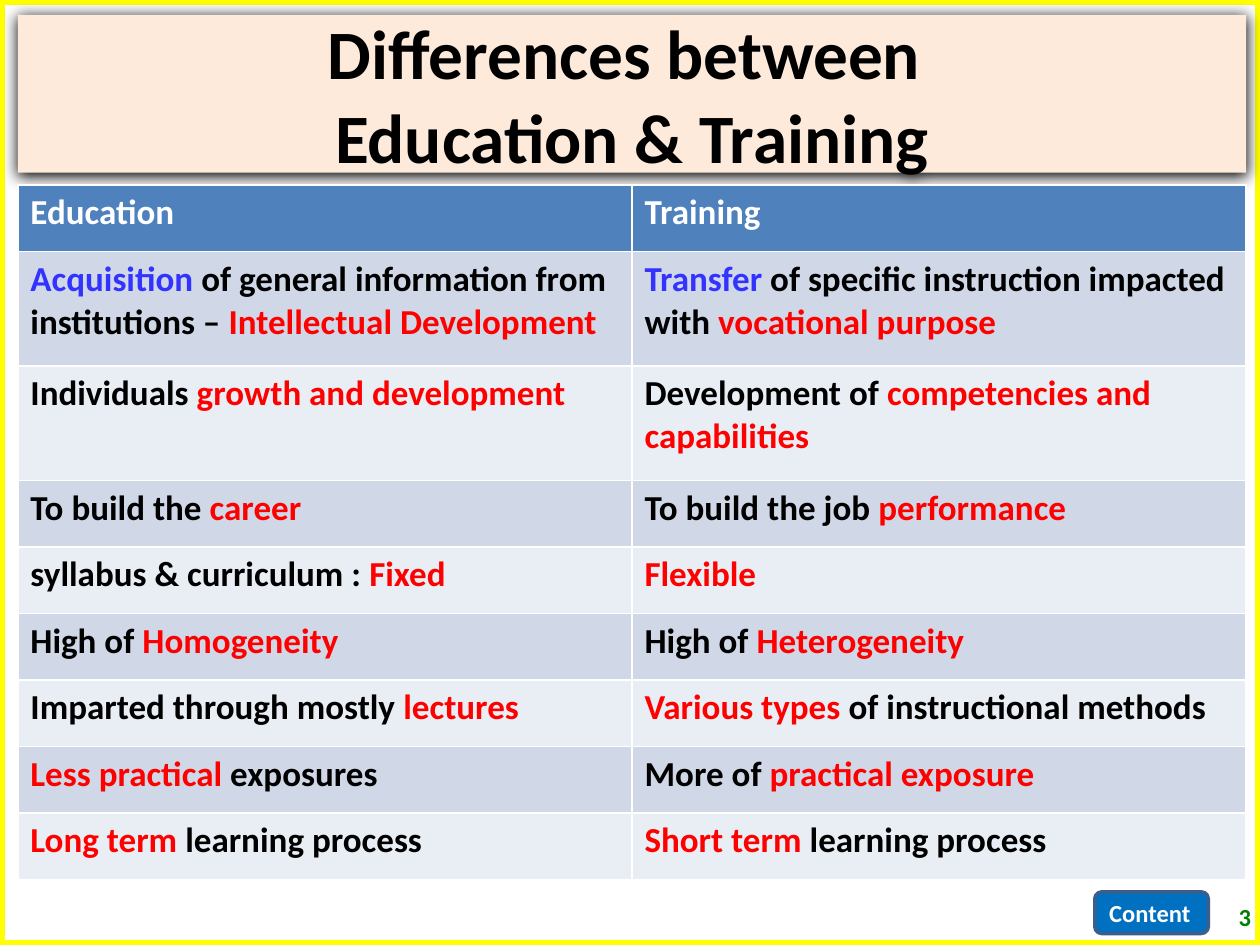
from dataclasses import dataclass
from typing import Optional

from lxml import etree
from pptx import Presentation
from pptx.dml.color import RGBColor
from pptx.enum.shapes import MSO_SHAPE
from pptx.enum.text import MSO_ANCHOR, PP_ALIGN
from pptx.oxml.ns import qn
from pptx.util import Cm, Pt

RECTANGLE, ROUNDED = MSO_SHAPE.RECTANGLE, MSO_SHAPE.ROUNDED_RECTANGLE
LEFT, CENTER, RIGHT = PP_ALIGN.LEFT, PP_ALIGN.CENTER, PP_ALIGN.RIGHT
MIDDLE = MSO_ANCHOR.MIDDLE

BLACK = RGBColor(0x00, 0x00, 0x00)
WHITE = RGBColor(0xFF, 0xFF, 0xFF)
RED = RGBColor(0xFF, 0x00, 0x00)
BLUE = RGBColor(0x33, 0x33, 0xFF)
GREEN = RGBColor(0x00, 0x80, 0x00)
YELLOW = RGBColor(0xFF, 0xFF, 0x00)
PEACH = RGBColor(0xFD, 0xEA, 0xDA)
BUTTON_FILL = RGBColor(0x00, 0x70, 0xC0)
BUTTON_LINE = RGBColor(0x3A, 0x5F, 0x8C)
HEADER_FILL = RGBColor(0x4F, 0x81, 0xBD)
BAND_FILLS = (RGBColor(0xE9, 0xED, 0xF4), RGBColor(0xD0, 0xD8, 0xE8))


@dataclass(frozen=True)
class Span:
    text: str
    color: RGBColor = BLACK


@dataclass(frozen=True)
class Box:
    left: float
    top: float
    width: float
    height: float
    shape: int = RECTANGLE
    fill: Optional[RGBColor] = None
    line: Optional[RGBColor] = None
    line_width: float = 0
    corner: Optional[float] = None
    span: Optional[Span] = None
    size: float = 14
    align: int = LEFT

    def place(self) -> list:
        return [Cm(value) for value in (self.left, self.top, self.width, self.height)]


FRAME = Box(0, 0, 25.4, 19.05, ROUNDED, line=YELLOW, line_width=6, corner=0)
BUTTON = Box(22.07, 17.98, 2.29, 0.84, ROUNDED, BUTTON_FILL, BUTTON_LINE, 2,
             span=Span("Content", WHITE))
TITLE = Box(0.36, 0.3, 24.76, 3.18, fill=PEACH, size=39.6, align=CENTER,
            span=Span("Differences between \vEducation & Training"))
NUMBER = Box(24.2, 17.98, 1.27, 0.99, span=Span("3", GREEN), align=RIGHT)
TABLE = Box(0.36, 3.73, 24.76, 14, size=20)

LOW_ROW, HIGH_ROW = 1.34, 2.31
HIGH_ROWS = (1, 2)

ROWS = [
    ([Span("Education", WHITE)], [Span("Training", WHITE)]),
    ([Span("Acquisition", BLUE), Span(" of general information from institutions – "),
      Span("Intellectual Development", RED)],
     [Span("Transfer", BLUE), Span(" of specific instruction impacted with "),
      Span("vocational purpose", RED)]),
    ([Span("Individuals "), Span("growth and development", RED)],
     [Span("Development of "), Span("competencies and capabilities", RED)]),
    ([Span("To build the "), Span("career", RED)],
     [Span("To build the job "), Span("performance", RED)]),
    ([Span("syllabus & curriculum : "), Span("Fixed", RED)], [Span("Flexible", RED)]),
    ([Span("High of "), Span("Homogeneity", RED)],
     [Span("High of "), Span("Heterogeneity", RED)]),
    ([Span("Imparted through mostly "), Span("lectures", RED)],
     [Span("Various types ", RED), Span("of instructional methods")]),
    ([Span("Less practical ", RED), Span("exposures")],
     [Span("More of "), Span("practical exposure", RED)]),
    ([Span("Long term ", RED), Span("learning process")],
     [Span("Short term ", RED), Span("learning process")]),
]


def format_run(run, size: float, color: RGBColor) -> None:
    values = {"name": "Calibri", "size": Pt(size), "bold": True}
    for name, value in values.items():
        setattr(run.font, name, value)
    run.font.color.rgb = color


def write_box(frame, box: Box) -> None:
    for name, value in {"word_wrap": True, "vertical_anchor": MIDDLE}.items():
        setattr(frame, name, value)
    para = frame.paragraphs[0]
    para.text = box.span.text
    para.alignment = box.align
    for run in para.runs:
        format_run(run, box.size, box.span.color)


def draw_shape(page, box: Box):
    shape = page.shapes.add_shape(box.shape, *box.place())
    shape.shadow.inherit = False
    if box.fill is None:
        shape.fill.background()
    else:
        shape.fill.solid()
        shape.fill.fore_color.rgb = box.fill
    if box.line is None:
        shape.line.fill.background()
    else:
        shape.line.color.rgb = box.line
        shape.line.width = Pt(box.line_width)
    if box.corner is not None:
        shape.adjustments[0] = box.corner
    if box.span:
        write_box(shape.text_frame, box)
    return shape


def add_shadow(shape, blur: float, distance: float, angle: int) -> None:
    effects = shape.element.spPr.find(qn("a:effectLst"))
    shadow = etree.SubElement(effects, qn("a:outerShdw"), blurRad=str(Pt(blur)),
                              dist=str(Pt(distance)), dir=str(angle * 60000))
    etree.SubElement(shadow, qn("a:srgbClr"), val=str(BLACK))


def draw_text(page, box: Box) -> None:
    write_box(page.shapes.add_textbox(*box.place()).text_frame, box)


def draw_table(page, box: Box, rows: list) -> None:
    table = page.shapes.add_table(len(rows), len(rows[0]), *box.place()).table
    for column in table.columns:
        column.width = Cm(box.width / len(rows[0]))
    for index, row in enumerate(rows):
        table.rows[index].height = Cm(HIGH_ROW if index in HIGH_ROWS else LOW_ROW)
        for position, spans in enumerate(row):
            cell = table.cell(index, position)
            cell.fill.solid()
            cell.fill.fore_color.rgb = BAND_FILLS[index % 2] if index else HEADER_FILL
            para = cell.text_frame.paragraphs[0]
            for span in spans:
                run = para.add_run()
                run.text = span.text
                format_run(run, box.size, span.color)


def main() -> None:
    deck = Presentation()
    deck.slide_width, deck.slide_height = Cm(FRAME.width), Cm(FRAME.height)
    page = deck.slides.add_slide(deck.slide_layouts[6])
    draw_shape(page, FRAME)
    draw_shape(page, BUTTON)
    add_shadow(draw_shape(page, TITLE), blur=8.5, distance=1, angle=90)
    draw_table(page, TABLE, ROWS)
    draw_text(page, NUMBER)
    deck.save("out.pptx")


if __name__ == "__main__":
    main()
